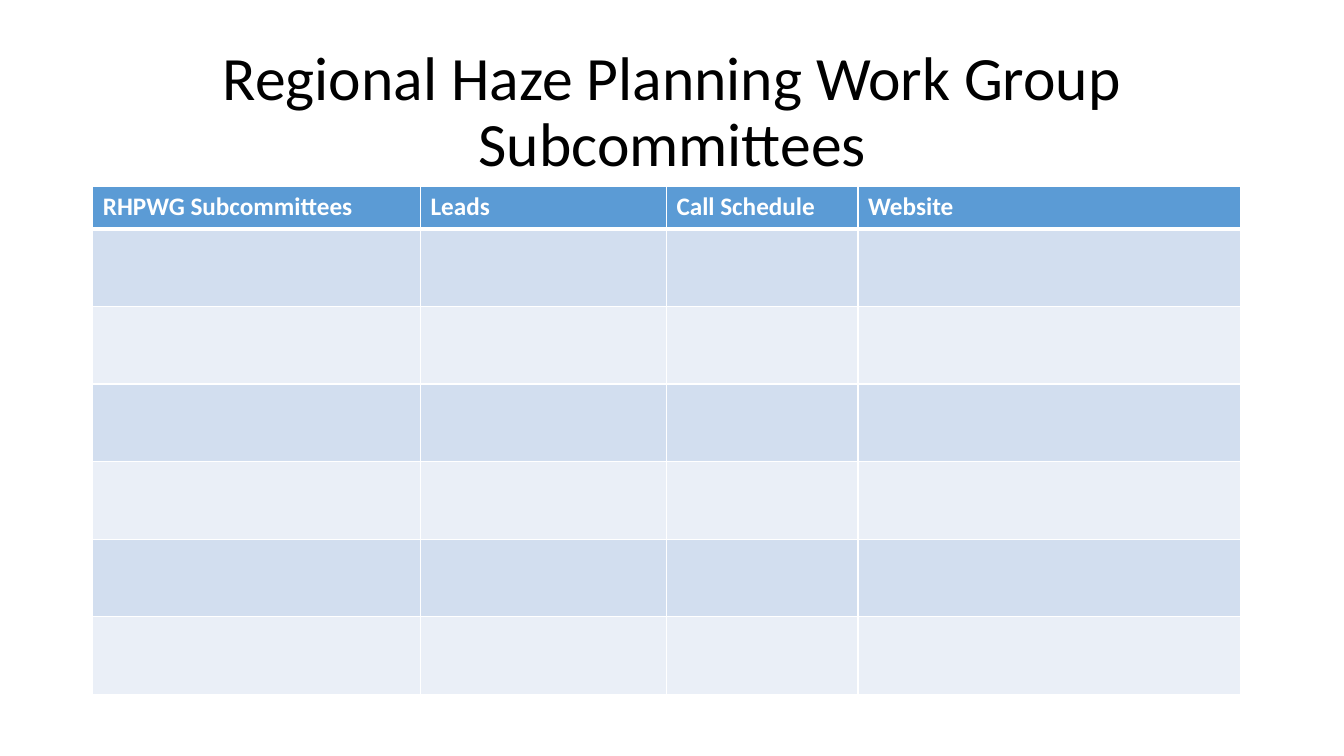
from lxml import etree
from pptx import Presentation, util as u
from pptx.dml.color import RGBColor
from pptx.enum import text
from pptx.oxml import ns

# Content
TITLE = ["Regional Haze Planning Work Group", "Subcommittees"]
HEADS = ["RHPWG Subcommittees", "Leads", "Call Schedule", "Website"]
BLANKS = 6

# Look and grid, in inches
FONT = "Calibri"
HEX = {"head": "5B9BD5", "odd": "D2DEEF", "even": "EAEFF7",
       "line": "FFFFFF", "ink": "000000"}
COLS = [3.25, 2.44, 1.9, 3.79]
ROWS = [0.42] + [0.77] * BLANKS
LEFT, TOP, WIDE = 0.92, 1.85, 11.5
HEAD_TOP = 0.4


def add_run(para, words, size, color, bold=False):
    run = para.add_run()
    run.text = words
    font = run.font
    font.name, font.size, font.bold = FONT, u.Pt(size), bold
    font.color.rgb = RGBColor.from_string(HEX[color])


def edge(cell, side, width):
    props = cell._tc.get_or_add_tcPr()
    line = etree.SubElement(props, ns.qn("a:ln" + side), w=str(u.Pt(width)))
    fill = etree.SubElement(line, ns.qn("a:solidFill"))
    etree.SubElement(fill, ns.qn("a:srgbClr"), val=HEX["line"])


def main():
    deck = Presentation()
    deck.slide_width, deck.slide_height = u.Inches(13.33), u.Inches(7.5)
    slide = deck.slides.add_slide(deck.slide_layouts[5])

    # Title
    title = slide.shapes.title
    title.left, title.top = u.Inches(LEFT), u.Inches(HEAD_TOP)
    title.width, title.height = u.Inches(WIDE), u.Inches(TOP - HEAD_TOP)
    frame = title.text_frame
    frame.word_wrap = True
    frame.auto_size = text.MSO_AUTO_SIZE.NONE
    frame.vertical_anchor = text.MSO_ANCHOR.MIDDLE
    para = frame.paragraphs[0]
    para.alignment = text.PP_ALIGN.CENTER
    para.line_spacing = 0.9
    for i, words in enumerate(TITLE):
        if i:
            para.add_line_break()
        add_run(para, words, 44, "ink")

    # Table
    table = slide.shapes.add_table(
        len(ROWS), len(COLS), u.Inches(LEFT), u.Inches(TOP),
        u.Inches(sum(COLS)), u.Inches(sum(ROWS))).table
    for col, width in zip(table.columns, COLS):
        col.width = u.Inches(width)
    for r, height in enumerate(ROWS):
        table.rows[r].height = u.Inches(height)
        band = "head" if r == 0 else "odd" if r % 2 else "even"
        for c, words in enumerate(HEADS):
            cell = table.cell(r, c)
            for side in "LRTB":
                thick = (r, side) in [(0, "B"), (1, "T")]
                edge(cell, side, 3 if thick else 1)
            cell.fill.solid()
            cell.fill.fore_color.rgb = RGBColor.from_string(HEX[band])
            if r == 0:
                add_run(cell.text_frame.paragraphs[0], words, 18, "line", True)

    deck.save("out.pptx")


if __name__ == "__main__":
    main()
